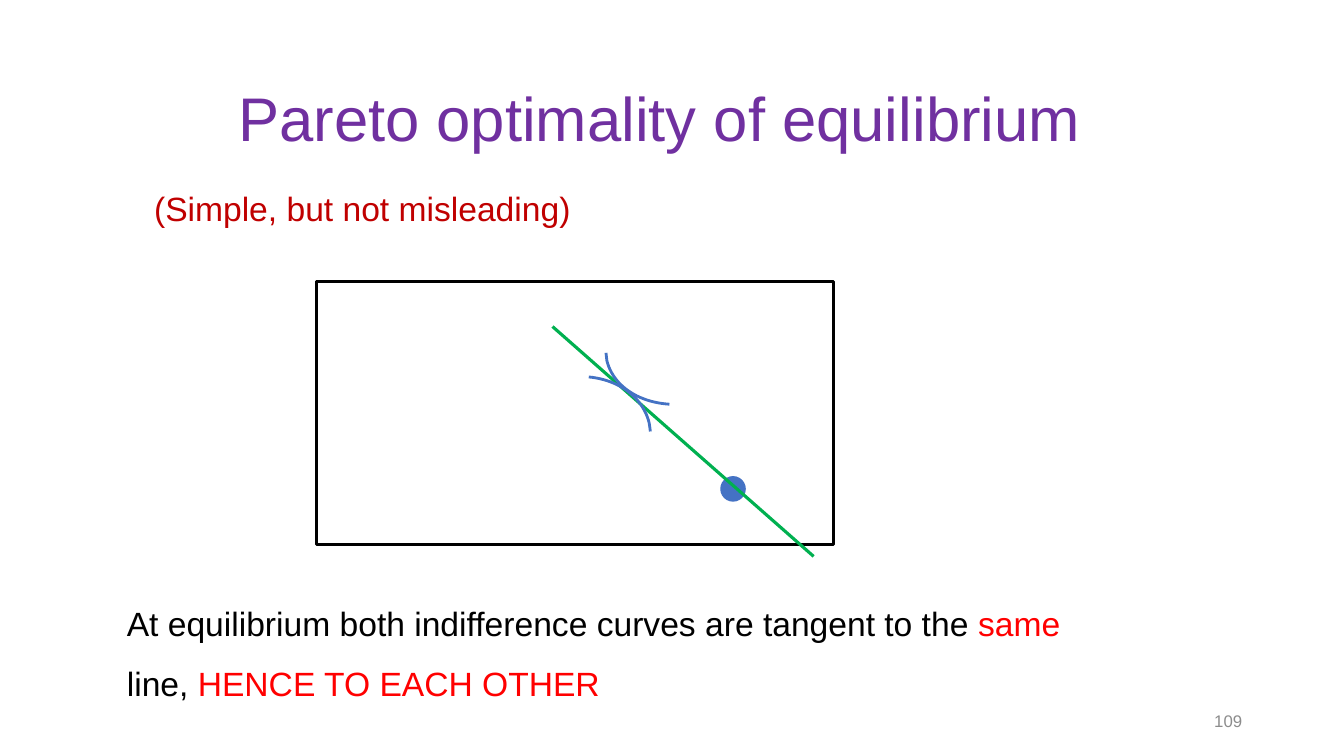
import pptx
import pptx.dml.color
import pptx.enum.shapes
import pptx.enum.text
import pptx.oxml.ns
import pptx.util
from lxml import etree

ALIGN = pptx.enum.text.PP_ALIGN
ANCHOR = pptx.enum.text.MSO_ANCHOR
SHAPE = pptx.enum.shapes.MSO_SHAPE
PURPLE, DARK_RED, RED, GREEN = "7030A0", "C00000", "FF0000", "00B050"
BLUE, BLACK, GRAY = "4472C4", "000000", "8C8C8C"


def color(hex_string):
    return pptx.dml.color.RGBColor.from_string(hex_string)


class Page:
    """Style and current slide; all lengths are percent of the slide's size."""

    font = "Arial"

    def __init__(self, deck):
        self.width, self.height = deck.slide_width, deck.slide_height
        self.slide = deck.slides.add_slide(deck.slide_layouts[5])

    def point(self, x, y):
        return round(self.width * x / 100), round(self.height * y / 100)

    def box(self, x, y, width, height):
        return *self.point(x, y), *self.point(width, height)

    def fill_text(self, holder, pieces, size, align=ALIGN.LEFT, anchor=ANCHOR.TOP, spacing=1.0):
        frame = holder.text_frame
        frame.word_wrap = True
        frame.auto_size = pptx.enum.text.MSO_AUTO_SIZE.NONE
        frame.vertical_anchor = anchor
        paragraph = frame.paragraphs[0]
        paragraph.alignment, paragraph.line_spacing = align, spacing
        for wording, ink in pieces:
            run = paragraph.add_run()
            run.text = wording
            run.font.name, run.font.size = self.font, pptx.util.Pt(size)
            run.font.color.rgb = color(ink)

    def title(self, place, wording):
        heading = self.slide.shapes.title
        heading.left, heading.top, heading.width, heading.height = self.box(*place)
        self.fill_text(heading, [(wording, PURPLE)], 44, ALIGN.CENTER, ANCHOR.MIDDLE, 0.9)

    def text(self, place, pieces, size=24, **layout):
        self.fill_text(self.slide.shapes.add_textbox(*self.box(*place)), pieces, size, **layout)

    def outline(self, shape, ink, weight, fill=None):
        shape.shadow.inherit = False
        if fill:
            shape.fill.solid()
            shape.fill.fore_color.rgb = color(fill)
        else:
            shape.fill.background()
        shape.line.color.rgb = color(ink)
        shape.line.width = pptx.util.Pt(weight)

    def shape(self, kind, place, ink, weight, fill=None):
        self.outline(self.slide.shapes.add_shape(kind, *self.box(*place)), ink, weight, fill)

    def line(self, start, end, ink, weight):
        connector = self.slide.shapes.add_connector(
            pptx.enum.shapes.MSO_CONNECTOR.STRAIGHT, *self.point(*start), *self.point(*end))
        connector.line.color.rgb = color(ink)
        connector.line.width = pptx.util.Pt(weight)
        etree.SubElement(connector._element.spPr, pptx.oxml.ns.qn("a:effectLst"))

    def curve(self, controls, tip, ink, weight, steps=24):
        """Draw a cubic Bezier curve that runs on straight to its tip."""
        points = []
        for step in range(steps + 1):
            t = step / steps
            weights = ((1 - t) ** 3, 3 * t * (1 - t) ** 2, 3 * t ** 2 * (1 - t), t ** 3)
            points.append(self.point(*(sum(w * c for w, c in zip(weights, axis))
                                       for axis in zip(*controls))))
        points.append(self.point(*tip))
        builder = self.slide.shapes.build_freeform(*points[0])
        builder.add_line_segments(points[1:], close=False)
        self.outline(builder.convert_to_shape(), ink, weight)


def main():
    deck = pptx.Presentation()
    deck.slide_width, deck.slide_height = pptx.util.Inches(13.33), pptx.util.Inches(7.5)
    page = Page(deck)

    # Title and slide number
    page.title((6.6, 4.4, 85, 23.33), "Pareto optimality of equilibrium")
    page.text((70.67, 92.67, 22.5, 5.33), [("109", GRAY)], 12,
              align=ALIGN.RIGHT, anchor=ANCHOR.MIDDLE)

    # Edgeworth box with endowment and price line
    page.shape(SHAPE.OVAL, (53.64, 63.07, 1.8, 3.2), BLUE, 1, BLUE)
    page.shape(SHAPE.RECTANGLE, (23.56, 37.2, 38.48, 34.8), BLACK, 2.25)
    page.line((41.11, 43.2), (60.54, 73.6), GREEN, 2.25)

    # Indifference curves, tangent to the price line
    indifference_curves = [
        ([(49.81, 53.47), (47.41, 53.2), (45.61, 50.93), (45.16, 47.73)], (45.09, 46.67)),
        ([(43.81, 49.87), (46.14, 50.27), (47.86, 52.67), (48.31, 56)], (48.39, 57.07)),
    ]
    for controls, tip in indifference_curves:
        page.curve(controls, tip, BLUE, 2)

    # Remark and conclusion
    page.text((10.73, 24.13, 39.31, 6.67), [("(Simple, but not misleading)", DARK_RED)])
    page.text((8.7, 76.4, 75, 16.53), [
        ("At equilibrium both indifference curves are tangent to the ", BLACK),
        ("same", RED),
        (" line,", BLACK),
        (" HENCE TO EACH OTHER", RED),
    ], spacing=1.5)

    deck.save("out.pptx")


if __name__ == "__main__":
    main()
